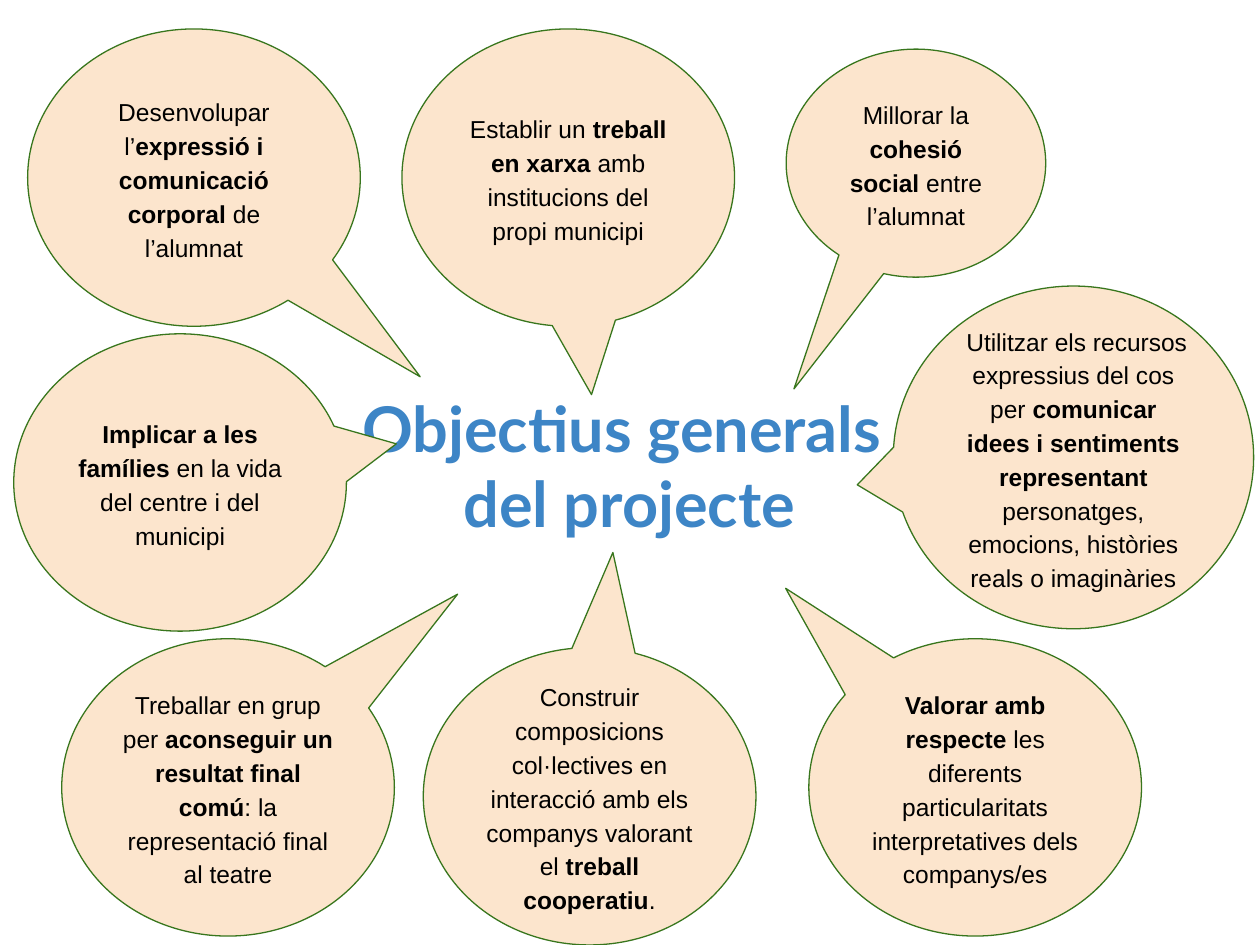
from pptx import Presentation
from pptx.dml.color import RGBColor
from pptx.enum.shapes import MSO_SHAPE
from pptx.enum.text import MSO_ANCHOR, MSO_AUTO_SIZE, PP_ALIGN
from pptx.util import Pt

PEACH = RGBColor(0xFC, 0xE5, 0xCD)
GREEN = RGBColor(0x38, 0x76, 0x1D)
BLUE = RGBColor(0x3D, 0x85, 0xC6)
BLACK = RGBColor(0, 0, 0)

# Content: title lines, then callouts as (left, top, size, tail, runs)
# The tail is relative to the callout's centre; runs are (text, bold)
TITLE = ["Objectius generals ", "del projecte"]
TITLE_BOX = (195.84, 215.28, 327.6, 92.16)
REGULAR = (190.08, 169.92)
SMALL = (148.32, 130.32)
LARGE = (205.92, 195.84)
CALLOUTS = [
    (15.84, 16.56, REGULAR, (0.68, 0.67), [
        ("Desenvolupar l’", False),
        ("expressió i comunicació corporal ", True),
        ("de l’alumnat", False)]),
    (449.28, 28.08, SMALL, (-0.47, 0.99), [
        ("Millorar la ", False),
        ("cohesió social ", True),
        ("entre l’alumnat", False)]),
    (229.68, 16.56, REGULAR, (0.07, 0.73), [
        ("Establir un ", False),
        ("treball en xarxa ", True),
        ("amb institucions del propi municipi", False)]),
    (7.92, 190.8, REGULAR, (0.65, -0.13), [
        ("Implicar a les famílies", True),
        (" en la vida del centre i del municipi", False)]),
    (35.28, 365.04, REGULAR, (0.69, -0.65), [
        ("Treballar en grup per ", False),
        ("aconseguir un resultat final comú", True),
        (": la representació final al teatre", False)]),
    (241.92, 370.08, REGULAR, (0.07, -0.82), [
        ("Construir composicions col·lectives en interacció amb els "
         "companys valorant el ", False),
        ("treball cooperatiu", True),
        (".", False)]),
    (462.24, 365.04, REGULAR, (-0.57, -0.67), [
        ("Valorar amb respecte", True),
        (" les diferents particularitats interpretatives dels companys/es", False)]),
    (510.48, 163.44, LARGE, (-0.6, 0.08), [
        (" Utilitzar els recursos expressius del cos per ", False),
        ("comunicar idees i sentiments representant ", True),
        ("personatges, emocions, històries reals o imaginàries", False)]),
]


def set_frame(tf, anchor):
    tf.word_wrap = True
    tf.auto_size = MSO_AUTO_SIZE.NONE
    tf.vertical_anchor = anchor
    tf.margin_left = tf.margin_right = tf.margin_top = tf.margin_bottom = Pt(7.2)


def add_run(p, text, font, size, color, bold):
    r = p.add_run()
    r.text = text
    r.font.name, r.font.size, r.font.bold = font, Pt(size), bold
    r.font.color.rgb = color


def add_callout(s, left, top, size, tail, runs):
    sp = s.shapes.add_shape(MSO_SHAPE.OVAL_CALLOUT, Pt(left), Pt(top), *map(Pt, size))
    sp.adjustments[0], sp.adjustments[1] = tail
    sp.shadow.inherit = False
    sp.fill.solid()
    sp.fill.fore_color.rgb = PEACH
    sp.line.color.rgb = GREEN
    sp.line.width = Pt(0.75)
    set_frame(sp.text_frame, MSO_ANCHOR.MIDDLE)
    p = sp.text_frame.paragraphs[0]
    p.alignment = PP_ALIGN.CENTER
    p.line_spacing = 1.15
    for text, bold in runs:
        add_run(p, text, "Arial", 14, BLACK, bold)


prs = Presentation()
prs.slide_width, prs.slide_height = Pt(720), Pt(540)
s = prs.slides.add_slide(prs.slide_layouts[5])

# Title in the centre
title = s.shapes.title
title.left, title.top, title.width, title.height = map(Pt, TITLE_BOX)
tf = title.text_frame
set_frame(tf, MSO_ANCHOR.TOP)
for i, line in enumerate(TITLE):
    p = tf.add_paragraph() if i else tf.paragraphs[0]
    p.alignment = PP_ALIGN.CENTER
    p.space_before = Pt(0)
    add_run(p, line, "Lato", 36, BLUE, True)

# Callouts pointing at the title
for callout in CALLOUTS:
    add_callout(s, *callout)

prs.save("out.pptx")
